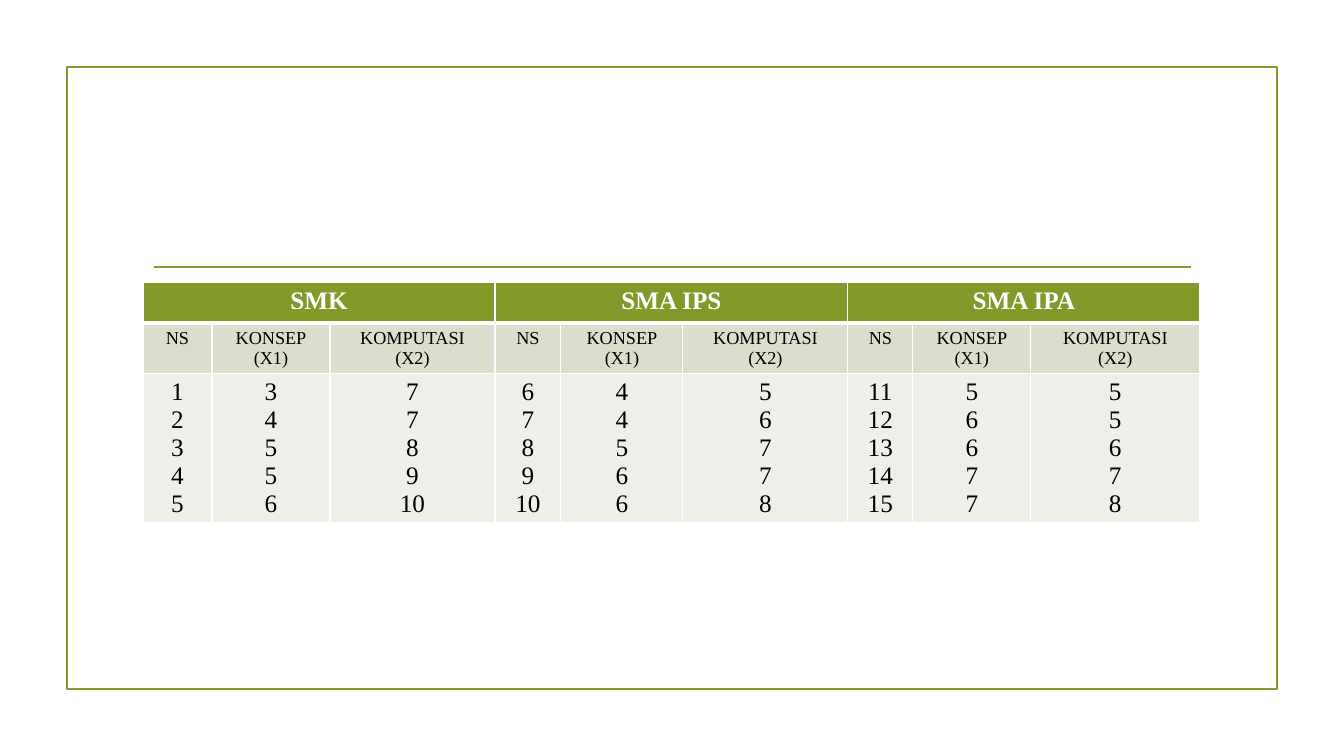
import pptx
import pptx.dml.color
import pptx.enum.shapes
import pptx.enum.text
import pptx.oxml
import pptx.oxml.ns
import pptx.util
from dataclasses import dataclass

PX = 9144000 / 1008


@dataclass
class Theme:
    font: str = "Times New Roman"
    green: str = "83992A"
    sage: str = "D9DECD"
    pale: str = "EDEFE8"
    white: str = "FFFFFF"
    black: str = "000000"
    large: int = 18
    small: int = 13
    rule: float = 1.25


theme = Theme()
rgb = pptx.dml.color.RGBColor.from_string


def px(count):
    return pptx.util.Emu(round(count * PX))


def style(cell, fill, color, size, bold, top, base):
    """Give a cell its white borders, given in points, then its fill and font."""
    props = cell._tc.get_or_add_tcPr()
    for side, width in (("L", 1), ("R", 1), ("T", top), ("B", base)):
        props.append(pptx.oxml.parse_xml(
            f'<a:ln{side} {pptx.oxml.ns.nsdecls("a")} w="{pptx.util.Pt(width)}">'
            f'<a:solidFill><a:srgbClr val="{theme.white}"/></a:solidFill></a:ln{side}>'))
    cell.fill.solid()
    cell.fill.fore_color.rgb = rgb(fill)
    for line in cell.text_frame.paragraphs:
        line.alignment = pptx.enum.text.PP_ALIGN.CENTER
        line.font.name = theme.font
        line.font.size = pptx.util.Pt(size)
        line.font.bold = bold
        line.font.color.rgb = rgb(color)


deck = pptx.Presentation()
deck.slide_width, deck.slide_height = px(1344), px(756)
slide = deck.slides.add_slide(deck.slide_layouts[6])

# Frame and title rule
frame = slide.shapes.add_shape(
    pptx.enum.shapes.MSO_SHAPE.RECTANGLE, px(67), px(67), px(1210), px(622))
frame.shadow.inherit = False
frame.fill.background()
rule = slide.shapes.add_connector(
    pptx.enum.shapes.MSO_CONNECTOR.STRAIGHT, px(154), px(267), px(1191), px(267))
rule._element.spPr.append(pptx.oxml.parse_xml(
    f'<a:effectLst {pptx.oxml.ns.nsdecls("a")}/>'))
for shape in (frame, rule):
    shape.line.color.rgb = rgb(theme.green)
    shape.line.width = pptx.util.Pt(theme.rule)

# Score table: three schools, each with number, concept and computation
heads = ["NS", "KONSEP\n(X1)", "KOMPUTASI\n(X2)"]
schools = {
    "SMK": [range(1, 6), (3, 4, 5, 5, 6), (7, 7, 8, 9, 10)],
    "SMA IPS": [range(6, 11), (4, 4, 5, 6, 6), (5, 6, 7, 7, 8)],
    "SMA IPA": [range(11, 16), (5, 6, 6, 7, 7), (5, 5, 6, 7, 8)],
}
widths = [69, 118, 165, 66, 122, 165, 65, 118, 169]
heights = [41, 50, 149]
table = slide.shapes.add_table(
    len(heights), len(widths), px(143), px(282),
    px(sum(widths)), px(sum(heights))).table
for col, width in zip(table.columns, widths):
    col.width = px(width)
for row, height in zip(table.rows, heights):
    row.height = px(height)

for group, (school, scores) in enumerate(schools.items()):
    first = group * len(heads)
    table.cell(0, first).merge(table.cell(0, first + len(heads) - 1))
    table.cell(0, first).text = school
    for step, (head, values) in enumerate(zip(heads, scores)):
        top, label, body = (table.cell(row, first + step) for row in range(3))
        label.text = head
        body.text = "\n".join(map(str, values))
        style(top, theme.green, theme.white, theme.large, True, 1, 3)
        style(label, theme.sage, theme.black, theme.small, False, 3, 1)
        style(body, theme.pale, theme.black, theme.large, False, 1, 1)

deck.save("out.pptx")
